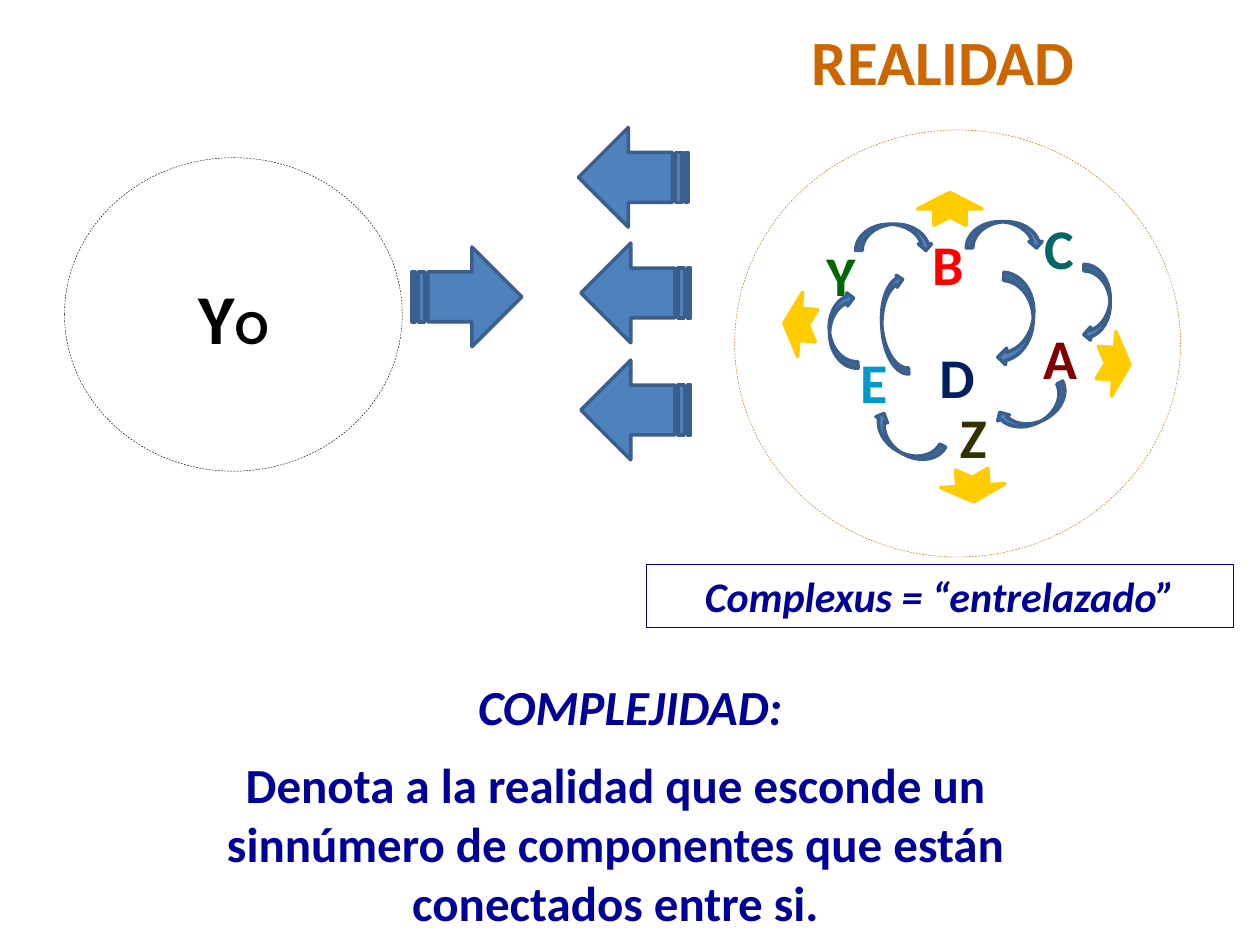
"""Builds the slide on complexity: the self facing an interwoven reality."""
from pptx import Presentation
from pptx import util as u
from pptx.dml.color import RGBColor
from pptx.enum import dml, shapes, text
from pptx.oxml.ns import qn
from lxml import etree

BLACK = RGBColor(0x00, 0x00, 0x00)
WHITE = RGBColor(0xFF, 0xFF, 0xFF)
ORANGE = RGBColor(0xCC, 0x66, 0x00)
BLUE = RGBColor(0x4F, 0x81, 0xBD)
EDGE = RGBColor(0x3A, 0x5F, 0x8C)
NAVY = RGBColor(0x00, 0x00, 0x99)
YELLOW = RGBColor(0xFF, 0xCC, 0x00)
MAROON = RGBColor(0x80, 0x00, 0x00)
RED = RGBColor(0xFF, 0x00, 0x00)
TEAL = RGBColor(0x00, 0x66, 0x66)
DARK_BLUE = RGBColor(0x00, 0x20, 0x60)
CYAN = RGBColor(0x00, 0x99, 0xCC)
GREEN = RGBColor(0x00, 0x66, 0x00)
OLIVE = RGBColor(0x33, 0x33, 0x00)

TITLE = ("REALIDAD", (16.08, 0.33, 5.87, 1.8))
BODY = ("Denota a la realidad que esconde un sinnúmero de componentes "
        "que están conectados entre si.", (2.46, 15.09, 19.89, 3.84))
HEADING = ("COMPLEJIDAD:", (9.35, 13.51, 6.71, 1.45))
CAPTION = ("Complexus = “entrelazado”", (13.03, 11.38, 11.84, 1.27))
SELF = ([("Y", 40), ("O", 28)], (3.76, 5.41, 1.93, 1.96))
CIRCLES = [((1.3, 3.18, 6.81, 6.32), BLACK), ((14.81, 2.62, 8.99, 8.61), ORANGE)]
LETTERS = [
    ("A", 20.78, 6.4, 1.19, MAROON), ("B", 18.54, 4.5, 1.14, RED),
    ("C", 20.8, 4.17, 1.12, TEAL), ("D", 18.69, 6.78, 1.22, DARK_BLUE),
    ("E", 17.09, 6.88, 1.07, CYAN), ("Y", 16.41, 4.72, 1.12, GREEN),
    ("Z", 19.1, 7.98, 1.07, OLIVE),
]
LETTER_HEIGHT = 1.63
STRIPED, CURVED, SMALL = (2.21, 2.01), (1.55, 0.53), (0.66, 1.3)
LINKS = [
    (17.25, 4.52, 0, CURVED), (19.48, 4.47, 0, CURVED), (21.34, 5.84, 90, CURVED),
    (20.07, 8, 153.5, CURVED), (16.21, 6.4, 266.2, CURVED),
    (19.56, 6.12, 94.2, (1.88, 0.66)), (17.48, 8.61, 208.6, CURVED),
    (17, 6.3, 266.2, (2.03, 0.48)),
]
EXCHANGES = [(11.66, 2.57, 180, STRIPED), (11.71, 4.9, 180, STRIPED),
             (11.71, 7.26, 180, STRIPED), (8.31, 4.98, 0, STRIPED)]
OUTWARD = [(19.28, 9.14, 86.5, SMALL), (22.12, 6.68, 3.8, SMALL),
           (18.82, 3.56, 270, SMALL), (15.8, 5.89, 184.5, SMALL)]
KIND = shapes.MSO_SHAPE
ARROWS = [(KIND.STRIPED_RIGHT_ARROW, EXCHANGES, BLUE, EDGE),
          (KIND.CURVED_DOWN_ARROW, LINKS, BLUE, EDGE),
          (KIND.NOTCHED_RIGHT_ARROW, OUTWARD, YELLOW, YELLOW)]


def put_text(sp, runs, size=28, color=NAVY, italic=False, wrap=False,
             align=text.PP_ALIGN.CENTER):
    """Fill a shape with one formatted paragraph."""
    tf = sp.text_frame
    tf.word_wrap = wrap
    tf.vertical_anchor = text.MSO_ANCHOR.TOP
    tf.auto_size = text.MSO_AUTO_SIZE.SHAPE_TO_FIT_TEXT
    p = tf.paragraphs[0]
    p.alignment = align
    p.space_before = u.Pt(0)
    for words, points in [(runs, size)] if isinstance(runs, str) else runs:
        r = p.add_run()
        r.text = words
        f = r.font
        f.name, f.size, f.bold, f.italic = "Calibri", u.Pt(points), True, italic
        f.color.rgb = color
    return p


def lengths(box):
    """Turn centimetre numbers into lengths."""
    return [u.Cm(n) for n in box]


def add_figure(s, kind, box, fill, line, width, rotation=0):
    """Add a preset shape with its fill and outline."""
    sp = s.shapes.add_shape(kind, *lengths(box))
    sp.shadow.inherit = False
    sp.rotation = rotation
    if fill is None:
        sp.fill.background()
    else:
        sp.fill.solid()
        sp.fill.fore_color.rgb = fill
    sp.line.color.rgb = line
    sp.line.width = u.Pt(width)
    return sp


def place(sp, box):
    """Move a placeholder to its box."""
    sp.left, sp.top, sp.width, sp.height = lengths(box)
    return sp


def main():
    """Build and save the slide."""
    prs = Presentation()
    prs.slide_width, prs.slide_height = u.Cm(25.4), u.Cm(19.05)
    s = prs.slides.add_slide(prs.slide_layouts[1])

    put_text(place(s.shapes.title, TITLE[1]), TITLE[0], size=36, color=ORANGE)
    p = put_text(place(s.placeholders[1], BODY[1]), BODY[0], wrap=True)
    pPr = p._p.get_or_add_pPr()
    pPr.set("marL", "0")
    pPr.set("indent", "0")
    etree.SubElement(pPr, qn("a:buNone"))

    for box, color in CIRCLES:
        sp = add_figure(s, KIND.OVAL, box, WHITE, color, 0.25)
        sp.line.dash_style = dml.MSO_LINE.DASH

    left = text.PP_ALIGN.LEFT
    put_text(s.shapes.add_textbox(*lengths(SELF[1])), SELF[0], color=BLACK, align=left)
    for letter, x, y, w, color in LETTERS:
        sp = s.shapes.add_textbox(*lengths((x, y, w, LETTER_HEIGHT)))
        put_text(sp, letter, size=32, color=color, align=left)

    for kind, arrows, fill, line in ARROWS:
        for x, y, rotation, size in arrows:
            add_figure(s, kind, (x, y, *size), fill, line, 2, rotation)

    put_text(s.shapes.add_textbox(*lengths(HEADING[1])), HEADING[0], italic=True)
    sp = add_figure(s, KIND.RECTANGLE, CAPTION[1], None, NAVY, 0.75)
    put_text(sp, CAPTION[0], size=24, italic=True, wrap=True)

    prs.save("out.pptx")


if __name__ == "__main__":
    main()
